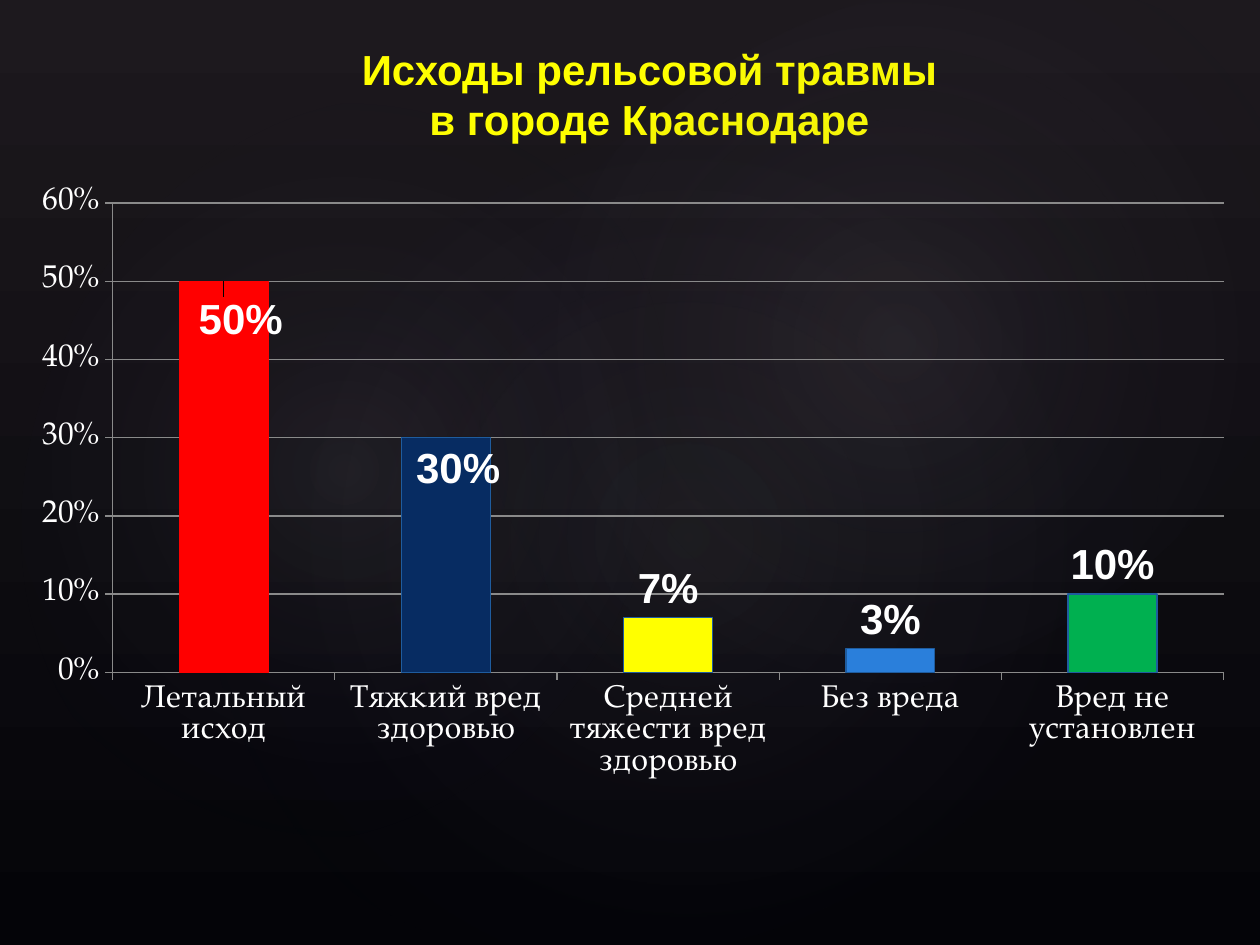
from dataclasses import dataclass

from lxml.etree import _Element
from pptx import Presentation
from pptx.chart.chart import Chart
from pptx.chart.data import CategoryChartData
from pptx.dml.color import RGBColor
from pptx.enum.chart import XL_CHART_TYPE, XL_LABEL_POSITION, XL_TICK_MARK
from pptx.enum.shapes import MSO_SHAPE
from pptx.enum.text import MSO_ANCHOR, PP_ALIGN
from pptx.oxml import parse_xml
from pptx.oxml.ns import nsdecls
from pptx.slide import Slide
from pptx.util import Emu, Pt

PX_PER_INCH = 126
AXIS_GRAY = "8A8A8A"


@dataclass
class Glow:
    left: int
    top: int
    width: int
    height: int
    rotation: float
    opacity: int


@dataclass
class Outcome:
    name: str
    share: float
    fill: str
    outline: str = "1F5C9E"
    label_shift: tuple[float, float] | None = None


GLOWS = [
    Glow(189, 144, 998, 786, 328.7, 7),
    Glow(-38, 161, 764, 617, 294.3, 8),
    Glow(451, 16, 893, 655, 328.7, 8),
]
OUTCOMES = [
    Outcome("Летальный исход", 0.5, "FF0000", "FF0000", (0.014, 0.09)),
    Outcome("Тяжкий вред здоровью", 0.3, "072C62", label_shift=(0.01, 0.08)),
    Outcome("Средней тяжести вред здоровью", 0.07, "FFFF00"),
    Outcome("Без вреда", 0.03, "2A7FDB"),
    Outcome("Вред не установлен", 0.1, "00B050"),
]


def px(length: int) -> Emu:
    """Turn pixels into EMU."""
    return Emu(round(length * 914400 / PX_PER_INCH))


def color(code: str) -> RGBColor:
    """Turn a hex string into a colour."""
    return RGBColor.from_string(code)


def style_font(font, face: str, size: int, code: str, bold: bool = False) -> None:
    """Set the face, size, colour and weight of a font."""
    font.name, font.size, font.bold = face, Pt(size), bold
    font.color.rgb = color(code)


def paint_background(slide: Slide) -> None:
    """Fade the slide from dark gray at the top to near black."""
    fill = slide.background.fill
    fill.gradient()
    fill.gradient_angle = 270
    for stop, code, position in zip(fill.gradient_stops, ("1D191E", "040408"), (0, 1)):
        stop.color.rgb = color(code)
        stop.position = position


def add_glow(slide: Slide, glow: Glow) -> None:
    """Draw a soft ellipse that fades out from its centre."""
    halo = slide.shapes.add_shape(
        MSO_SHAPE.OVAL, px(glow.left), px(glow.top), px(glow.width), px(glow.height)
    )
    halo.rotation = glow.rotation
    halo.shadow.inherit = False
    halo.line.fill.background()
    fade = parse_xml(
        f'<a:gradFill {nsdecls("a")} rotWithShape="1"><a:gsLst>'
        f'<a:gs pos="0"><a:srgbClr val="C4BCC6"><a:alpha val="{glow.opacity * 1000}"/></a:srgbClr></a:gs>'
        '<a:gs pos="58000"><a:srgbClr val="242852"><a:alpha val="0"/></a:srgbClr></a:gs>'
        '</a:gsLst><a:path path="circle"><a:fillToRect l="50000" t="50000" r="50000" b="50000"/>'
        "</a:path></a:gradFill>"
    )
    halo.element.spPr.prstGeom.addnext(fade)


def manual_layout(**settings: str | float) -> _Element:
    """Build a manual chart layout."""
    parts = "".join(f'<c:{name} val="{value}"/>' for name, value in settings.items())
    return parse_xml(
        f'<c:layout {nsdecls("c")}><c:manualLayout>{parts}</c:manualLayout></c:layout>'
    )


def place_plot(chart: Chart) -> None:
    """Fix the inner plot area within the chart."""
    plot_area = chart._chartSpace.chart.plotArea
    for layout in plot_area.xpath("c:layout"):
        plot_area.remove(layout)
    plot_area.insert(0, manual_layout(
        layoutTarget="inner", xMode="edge", yMode="edge", x=0.08, y=0.07, w=0.91, h=0.63
    ))


def format_axes(chart: Chart) -> None:
    """Style both axes and the gridlines."""
    shares = chart.value_axis
    shares.minimum_scale, shares.maximum_scale, shares.major_unit = 0, 0.6, 0.1
    shares.has_major_gridlines = True
    shares.tick_labels.number_format = "0%"
    shares.tick_labels.number_format_is_linked = False
    for axis in (shares, chart.category_axis):
        axis.major_tick_mark = XL_TICK_MARK.OUTSIDE
        axis.minor_tick_mark = XL_TICK_MARK.NONE
    for line in (shares.format.line, chart.category_axis.format.line,
                 shares.major_gridlines.format.line):
        line.color.rgb = color(AXIS_GRAY)
        line.width = Pt(0.75)


def format_bars(chart: Chart) -> None:
    """Colour the bars and place their value labels."""
    plot = chart.plots[0]
    plot.gap_width = 150
    plot.vary_by_categories = False
    bars = plot.series[0]
    labels = bars.data_labels
    labels.show_value = True
    labels.number_format = "0%"
    labels.number_format_is_linked = False
    labels.position = XL_LABEL_POSITION.OUTSIDE_END
    style_font(labels.font, "Arial", 24, "FFFFFF", True)
    for index, outcome in enumerate(OUTCOMES):
        bar = bars.points[index]
        bar.format.fill.solid()
        bar.format.fill.fore_color.rgb = color(outcome.fill)
        bar.format.line.color.rgb = color(outcome.outline)
        bar.format.line.width = Pt(0.75)
        if outcome.label_shift:
            style_font(bar.data_label.font, "Arial", 24, "FFFFFF", True)
            bar.data_label.position = XL_LABEL_POSITION.OUTSIDE_END
            x, y = outcome.label_shift
            label_index = chart._chartSpace.xpath(f".//c:dLbl/c:idx[@val='{index}']")[0]
            label_index.addnext(manual_layout(x=x, y=y))


def add_outcome_chart(slide: Slide) -> None:
    """Add the column chart of injury outcomes."""
    shares = CategoryChartData(number_format="0%")
    shares.categories = [outcome.name for outcome in OUTCOMES]
    shares.add_series("Series 1", [outcome.share for outcome in OUTCOMES])
    chart = slide.shapes.add_chart(
        XL_CHART_TYPE.COLUMN_CLUSTERED, px(15), px(151), px(1221), px(745), shares
    ).chart
    chart.has_legend = False
    chart.has_title = False
    style_font(chart.font, "TeX Gyre Pagella", 18, "FFFFFF")
    place_plot(chart)
    format_axes(chart)
    format_bars(chart)


def set_title(slide: Slide) -> None:
    """Write the two-line heading in the title placeholder."""
    heading = slide.shapes.title
    heading.left, heading.top, heading.width, heading.height = px(213), px(37), px(873), px(115)
    frame = heading.text_frame
    frame.text = "Исходы рельсовой травмы\nв городе Краснодаре"
    frame.word_wrap = True
    frame.vertical_anchor = MSO_ANCHOR.TOP
    for paragraph in frame.paragraphs:
        paragraph.alignment = PP_ALIGN.CENTER
        paragraph.space_before = Pt(0)
        style_font(paragraph.runs[0].font, "Arial", 24, "FFFF00", True)


def main() -> None:
    """Build and save the slide."""
    deck = Presentation()
    deck.slide_width, deck.slide_height = px(1260), px(945)
    slide = deck.slides.add_slide(deck.slide_layouts[5])
    paint_background(slide)
    for glow in GLOWS:
        add_glow(slide, glow)
    add_outcome_chart(slide)
    set_title(slide)
    deck.save("out.pptx")


if __name__ == "__main__":
    main()
